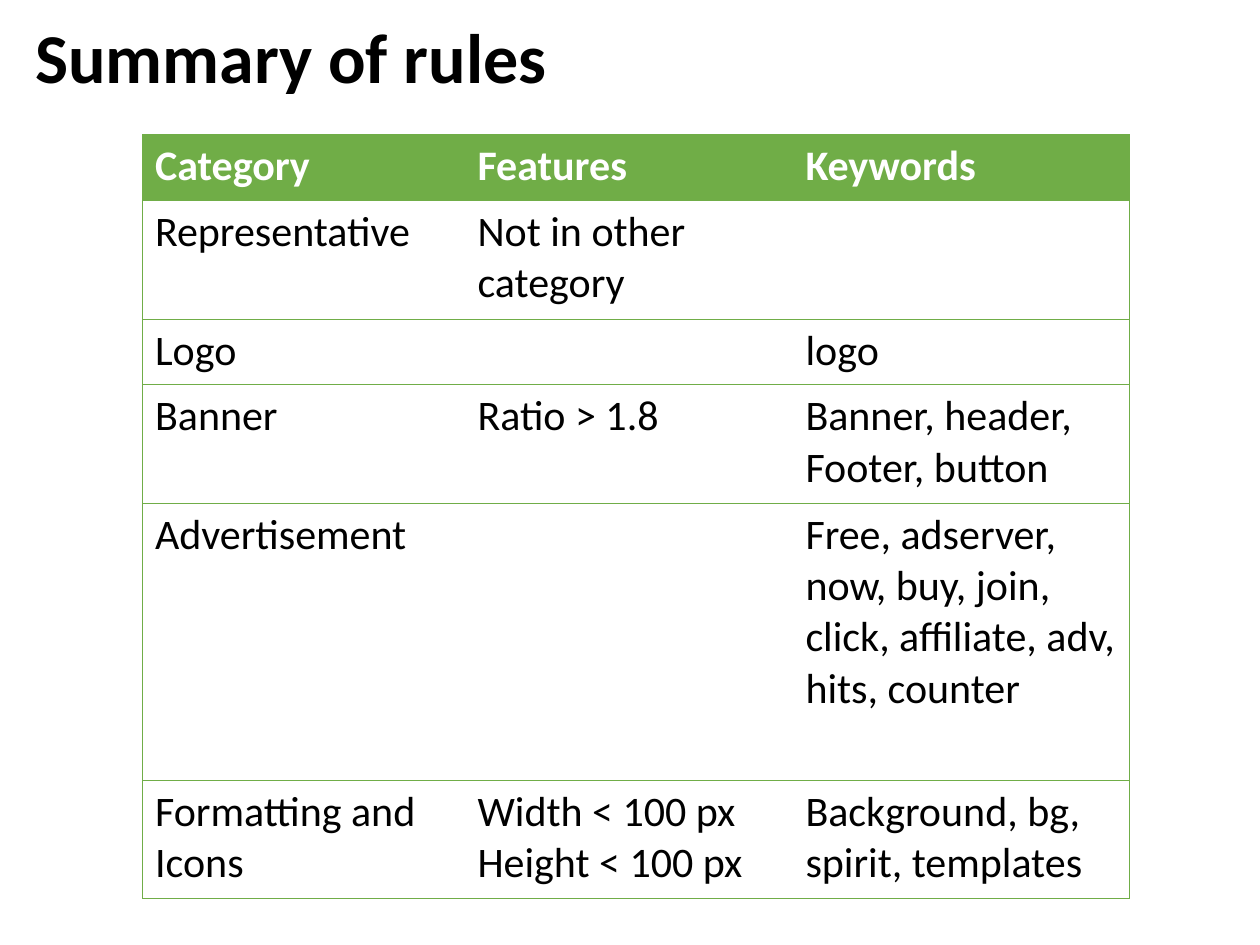
from dataclasses import dataclass

from lxml.etree import SubElement
from pptx import Presentation
from pptx.dml.color import RGBColor
from pptx.enum.text import MSO_ANCHOR, MSO_AUTO_SIZE, PP_ALIGN
from pptx.oxml.ns import qn
from pptx.util import Pt

GREEN = "70AD47"
BLACK = "000000"
WHITE = "FFFFFF"
FONT = "Calibri"


@dataclass
class Rule:
    category: str
    features: str
    keywords: str
    height: float


RULES = [
    Rule("Category", "Features", "Keywords", 37.6),
    Rule("Representative", "Not in other category", "", 67.7),
    Rule("Logo", "", "logo", 37.6),
    Rule("Banner", "Ratio > 1.8", "Banner, header,\nFooter, button", 67.7),
    Rule(
        "Advertisement",
        "",
        "Free, adserver, now, buy, join, click, affiliate, adv, hits, counter",
        158.4,
    ),
    Rule(
        "Formatting and Icons",
        "Width < 100 px\nHeight < 100 px",
        "Background, bg, spirit, templates",
        67.7,
    ),
]
COLUMN_WIDTHS = [184.3, 187.4, 192.2]


def color(value: str) -> RGBColor:
    return RGBColor.from_string(value)


def write(frame, text: str, *, size: float, fill: str = BLACK,
          bold: bool = False, line_spacing: float = 1.0) -> None:
    frame.text = text
    for para in frame.paragraphs:
        para.alignment = PP_ALIGN.LEFT
        para.line_spacing = line_spacing
        para.font.size = Pt(size)
        for span in para.runs:
            span.font.name = FONT
            span.font.size = Pt(size)
            span.font.bold = bold
            span.font.color.rgb = color(fill)


def set_borders(cell, visible: dict[str, bool]) -> None:
    properties = cell._tc.get_or_add_tcPr()
    for position, (side, shown) in enumerate(visible.items()):
        line = SubElement(properties, qn(f"a:ln{side}"), w=str(Pt(0.5)))
        if shown:
            solid = SubElement(line, qn("a:solidFill"))
            SubElement(solid, qn("a:srgbClr"), val=GREEN)
        else:
            SubElement(line, qn("a:noFill"))
        properties.insert(position, line)


def add_title(page, text: str) -> None:
    title = page.shapes.title
    title.left, title.top = Pt(13), Pt(11.5)
    title.width, title.height = Pt(620.6), Pt(46)
    frame = title.text_frame
    frame.auto_size = MSO_AUTO_SIZE.NONE
    frame.vertical_anchor = MSO_ANCHOR.MIDDLE
    write(frame, text, size=40, bold=True, line_spacing=0.9)


def add_rules_table(page, rules: list[Rule]) -> None:
    last = len(COLUMN_WIDTHS) - 1
    table = page.shapes.add_table(
        len(rules), len(COLUMN_WIDTHS), Pt(81.4), Pt(77),
        Pt(sum(COLUMN_WIDTHS)), Pt(sum(rule.height for rule in rules)),
    ).table
    table.horz_banding = False
    for column, width in zip(table.columns, COLUMN_WIDTHS):
        column.width = Pt(width)
    for row_index, rule in enumerate(rules):
        table.rows[row_index].height = Pt(rule.height)
        header = row_index == 0
        texts = (rule.category, rule.features, rule.keywords)
        for column_index, text in enumerate(texts):
            cell = table.cell(row_index, column_index)
            if header:
                cell.fill.solid()
                cell.fill.fore_color.rgb = color(GREEN)
            else:
                cell.fill.background()
            set_borders(cell, {
                "L": column_index == 0,
                "R": column_index == last,
                "T": True,
                "B": True,
            })
            write(cell.text_frame, text, size=24,
                  fill=WHITE if header else BLACK, bold=header)


def main() -> None:
    deck = Presentation()
    deck.slide_width, deck.slide_height = Pt(720), Pt(540)
    page = deck.slides.add_slide(deck.slide_layouts.get_by_name("Title Only"))
    add_rules_table(page, RULES)
    add_title(page, "Summary of rules")
    deck.save("out.pptx")


if __name__ == "__main__":
    main()
